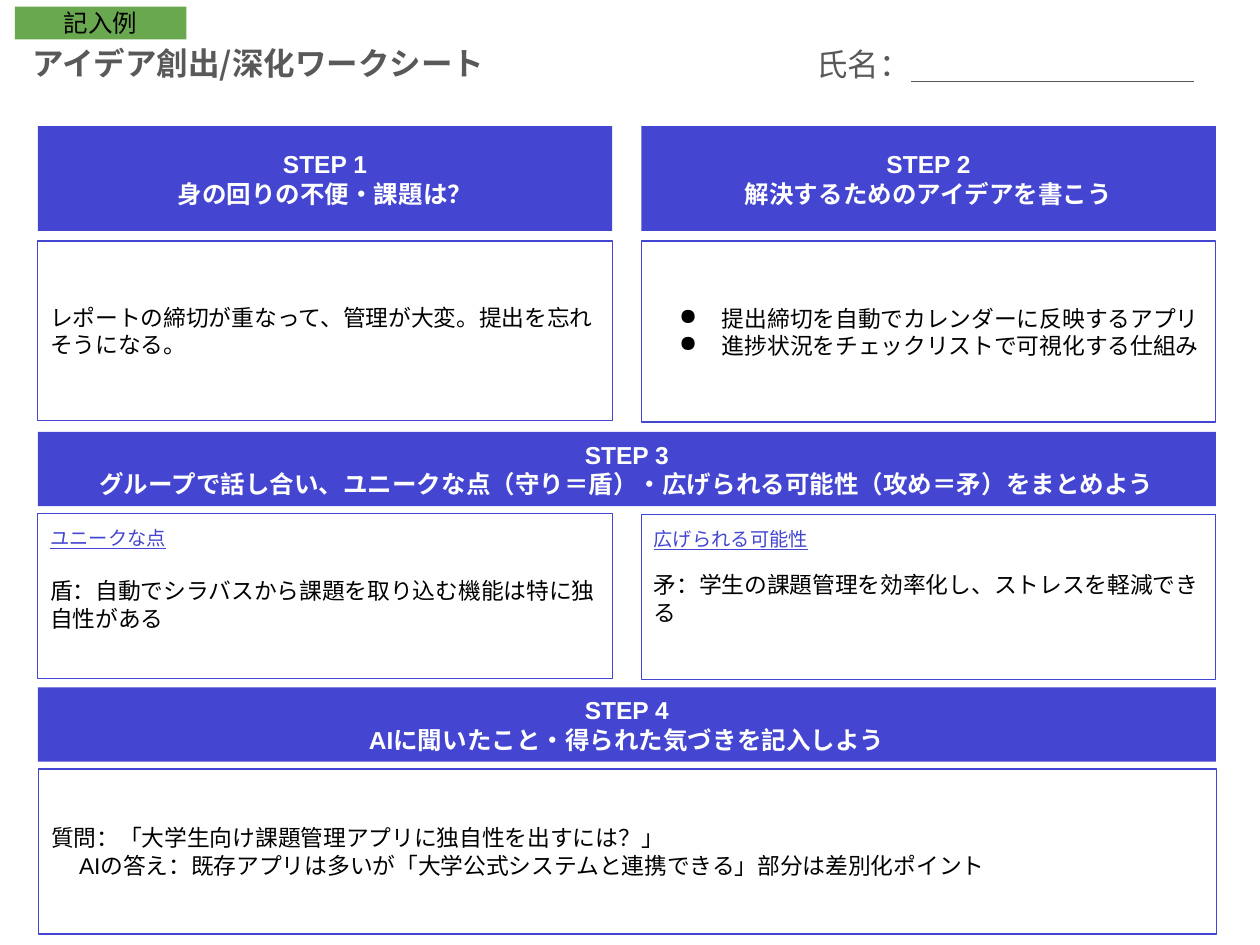
from lxml.etree import SubElement
from pptx import Presentation
from pptx.dml.color import RGBColor
from pptx.enum.shapes import MSO_CONNECTOR, MSO_SHAPE
from pptx.enum.text import MSO_ANCHOR, PP_ALIGN
from pptx.oxml.ns import qn
from pptx.util import Pt

BLUE, GREEN, GRAY, WHITE, BLACK = "4445D0", "6AA84F", "595959", "FFFFFF", "000000"
LATIN, JAPANESE = "Arial", "Noto Sans CJK JP"
LEFT, RIGHT, HALF, FULL = 21.6, 366.5, 328.3, 673.2
INSET = 7.2

# Text, left, top, width, bold
HEADINGS = [
    ("アイデア創出/深化ワークシート", 11.5, 18, 540.7, True),
    ("氏名：", 459.4, 18.7, 252, False),
]
# Step number, instruction, left, top, width, height
STEPS = [
    (1, "身の回りの不便・課題は？", LEFT, 72, HALF, 60),
    (2, "解決するためのアイデアを書こう", RIGHT, 72, HALF, 60),
    (3, "グループで話し合い、ユニークな点（守り＝盾）・広げられる可能性（攻め＝矛）をまとめよう",
     LEFT, 246.8, FULL, 42.5),
    (4, "AIに聞いたこと・得られた気づきを記入しよう", LEFT, 392.8, FULL, 42.5),
]
PROBLEM = "レポートの締切が重なって、管理が大変。提出を忘れそうになる。"
IDEAS = [
    "提出締切を自動でカレンダーに反映するアプリ",
    "進捗状況をチェックリストで可視化する仕組み",
]
# Label, answer, left, top, gap between them
VIEWPOINTS = [
    ("ユニークな点", "盾：自動でシラバスから課題を取り込む機能は特に独自性がある", LEFT, 293.4, 16),
    ("広げられる可能性", "矛：学生の課題管理を効率化し、ストレスを軽減できる", RIGHT, 294, 12),
]
QUESTION = "質問：「大学生向け課題管理アプリに独自性を出すには？」"
REPLY = "AIの答え：既存アプリは多いが「大学公式システムと連携できる」部分は差別化ポイント"

presentation = Presentation()
presentation.slide_width, presentation.slide_height = Pt(720), Pt(540)
slide = presentation.slides.add_slide(presentation.slide_layouts[6])


def rgb(color):
    return RGBColor.from_string(color)


def prepare_frame(shape, anchor):
    frame = shape.text_frame
    frame.word_wrap = True
    frame.vertical_anchor = anchor
    frame.margin_left = frame.margin_right = Pt(INSET)
    frame.margin_top = frame.margin_bottom = Pt(INSET)
    return frame


def add_box(left, top, width, height, fill, line=None, anchor=MSO_ANCHOR.MIDDLE):
    shape = slide.shapes.add_shape(
        MSO_SHAPE.RECTANGLE, Pt(left), Pt(top), Pt(width), Pt(height))
    shape.shadow.inherit = False
    shape.fill.solid()
    shape.fill.fore_color.rgb = rgb(fill)
    if line:
        shape.line.color.rgb = rgb(line)
        shape.line.width = Pt(0.75)
    else:
        shape.line.fill.background()
    return prepare_frame(shape, anchor)


def add_answer_box(left, top, width, height, anchor=MSO_ANCHOR.MIDDLE):
    return add_box(left, top, width, height, WHITE, BLUE, anchor)


def write(frame, text, size=13, color=BLACK, name=LATIN, bold=False,
          underline=False, align=PP_ALIGN.LEFT, gap=0, indent=0, bullet=None):
    """Fill the empty first paragraph of the frame, or add another one."""
    paragraph = frame.paragraphs[0]
    if paragraph.runs:
        paragraph = frame.add_paragraph()
    paragraph.text = text
    paragraph.alignment = align
    if gap:
        paragraph.space_before = Pt(gap)
    properties = paragraph._p.get_or_add_pPr()
    if indent:
        properties.set("marL", str(Pt(indent)))
    if bullet:
        properties.set("indent", str(Pt(-24.5)))
        bullet_color = SubElement(properties, qn("a:buClr"))
        SubElement(bullet_color, qn("a:srgbClr"), val=color)
        SubElement(properties, qn("a:buChar"), char=bullet)
    font = paragraph.font
    font.size, font.name, font.bold, font.underline = Pt(size), name, bold, underline
    font.color.rgb = rgb(color)
    SubElement(properties.find(qn("a:defRPr")), qn("a:ea"), typeface=name)


for text, left, top, width, bold in HEADINGS:
    text_box = slide.shapes.add_textbox(Pt(left), Pt(top), Pt(width), Pt(36))
    write(prepare_frame(text_box, MSO_ANCHOR.TOP), text, 18, GRAY, JAPANESE, bold)

name_line = slide.shapes.add_connector(
    MSO_CONNECTOR.STRAIGHT, Pt(520.5), Pt(46.4), Pt(682.5), Pt(46.4))
name_line.line.color.rgb = rgb(GRAY)
name_line.line.width = Pt(0.75)
SubElement(name_line._element.spPr, qn("a:effectLst"))

for number, instruction, *place in STEPS:
    frame = add_box(*place, BLUE)
    for text in (f"STEP {number}", instruction):
        write(frame, text, 14, WHITE, bold=True, align=PP_ALIGN.CENTER)

write(add_answer_box(LEFT, 137.7, HALF, 102.5), PROBLEM)

ideas_frame = add_answer_box(RIGHT, 137.7, HALF, 103.5)
for idea in IDEAS:
    write(ideas_frame, idea, align=PP_ALIGN.CENTER, indent=36, bullet="●")

for label, answer, left, top, gap in VIEWPOINTS:
    frame = add_answer_box(left, top, HALF, 94.3, MSO_ANCHOR.TOP)
    write(frame, label, 11, BLUE, JAPANESE, underline=True)
    write(frame, answer, gap=gap)

reply_frame = add_answer_box(LEFT + 0.5, 439.4, FULL, 94.3)
write(reply_frame, QUESTION)
write(reply_frame, REPLY, indent=16)

write(add_box(8.6, 3.8, 97.9, 18.7, GREEN), "記入例", 14, align=PP_ALIGN.CENTER)

presentation.save("out.pptx")
